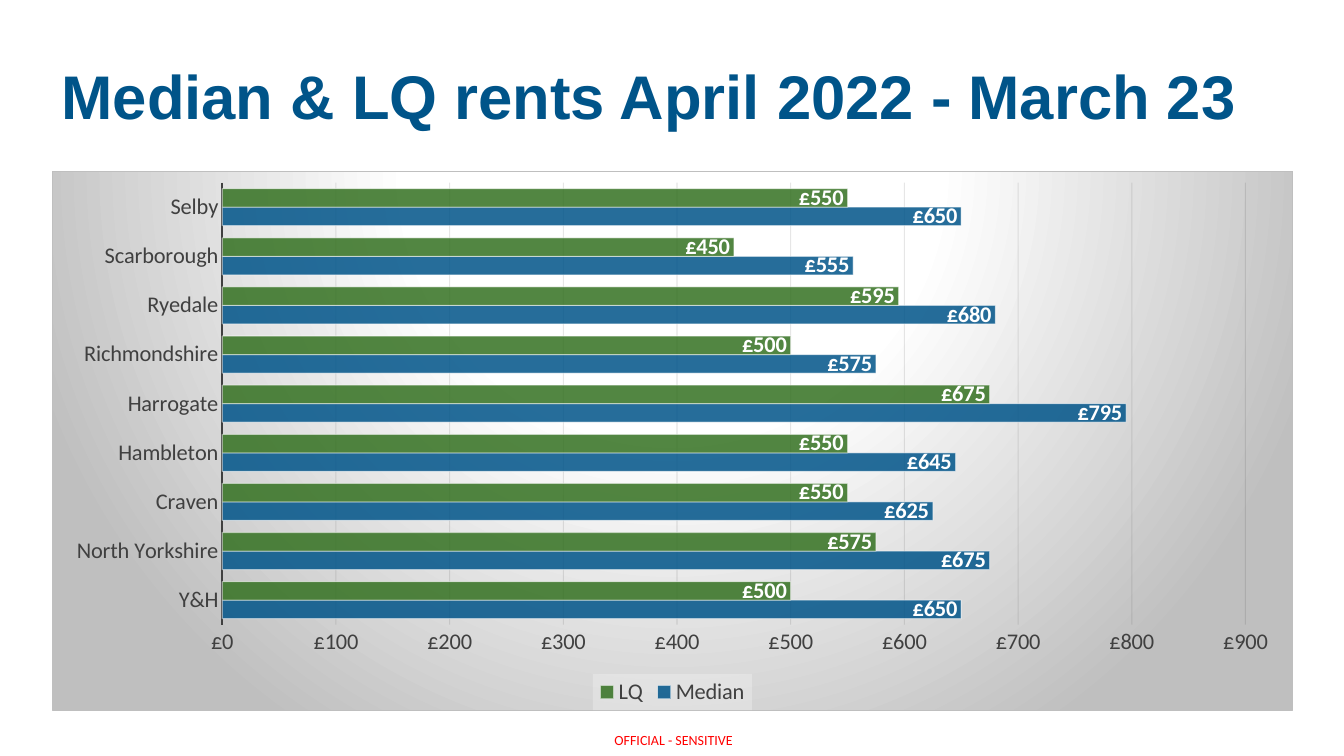
"""Build the slide of median and lower quartile rents by district."""
from dataclasses import dataclass
from typing import Any

from lxml import etree
from pptx import Presentation
from pptx import util as u
from pptx.chart import data as cd
from pptx.dml.color import RGBColor
from pptx.enum import chart as ce
from pptx.enum import text
from pptx.oxml import parse_xml
from pptx.oxml.ns import qn


@dataclass(frozen=True)
class Theme:
    """Colours, fonts and type sizes of the slide."""
    blue: str = "005489"
    green: str = "347121"
    grey: str = "404040"
    edge: str = "BFBFBF"
    grid: str = "0D0D0D"
    pale: str = "F2F2F2"
    white: str = "FFFFFF"
    black: str = "000000"
    red: str = "FF0000"
    head: str = "Arial"
    body: str = "Calibri"
    title: int = 44
    label: int = 16
    small: int = 10


@dataclass(frozen=True)
class Rents:
    """One series of monthly rents."""
    name: str
    color: str
    vals: tuple[int, ...]


@dataclass(frozen=True)
class Note:
    """One line of text and its place in centimetres."""
    words: str
    box: tuple[float, float, float, float]
    font: str
    size: int
    color: str
    bold: bool
    inset: tuple[float, float]
    align: Any
    wrap: bool
    lead: float


T = Theme()
POUNDS = '"£"#,##0'
AREAS = ("Y&H", "North Yorkshire", "Craven", "Hambleton", "Harrogate",
         "Richmondshire", "Ryedale", "Scarborough", "Selby")
RENTS = (
    Rents("Median", T.blue, (650, 675, 625, 645, 795, 575, 680, 555, 650)),
    Rents("LQ", T.green, (500, 575, 550, 550, 675, 500, 595, 450, 550)),
)
NOTES = (
    Note("OFFICIAL - SENSITIVE", (15.44, 18.44, 3.07, 0.43), T.body, T.small,
         T.red, False, (0, 0), text.PP_ALIGN.CENTER, False, 1.0),
    Note("Median & LQ rents April 2022 - March 23", (1.3, 0.69, 30.4, 3.63),
         T.head, T.title, T.blue, True, (0.25, 0.13), text.PP_ALIGN.LEFT,
         True, 0.9),
)
SPACE = ('xmlns:c="http://schemas.openxmlformats.org/drawingml/2006/chart" '
         'xmlns:a="http://schemas.openxmlformats.org/drawingml/2006/main"')
GLOW = f"""<c:spPr {SPACE}><a:gradFill><a:gsLst>
<a:gs pos="0"><a:srgbClr val="{T.white}"/></a:gs>
<a:gs pos="39000"><a:srgbClr val="{T.white}"/></a:gs>
<a:gs pos="100000"><a:srgbClr val="{T.edge}"/></a:gs></a:gsLst>
<a:path path="circle"><a:fillToRect l="50000" t="-80000" r="50000" b="180000"/>
</a:path></a:gradFill>
<a:ln w="9525"><a:solidFill><a:srgbClr val="{T.edge}"/></a:solidFill></a:ln>
</c:spPr>"""
VEIL = f"""<c:spPr {SPACE}><a:solidFill><a:srgbClr val="{T.pale}">
<a:alpha val="39000"/></a:srgbClr></a:solidFill></c:spPr>"""


def assign(item: Any, attrs: dict[str, Any]) -> None:
    """Set every named attribute of an item."""
    for key, val in attrs.items():
        setattr(item, key, val)


def style(font: Any, color: str, size: int, face: str = T.body,
          bold: bool = False) -> None:
    """Give a font its face, size, weight and colour."""
    assign(font, {"name": face, "size": u.Pt(size), "bold": bold})
    font.color.rgb = RGBColor.from_string(color)


def stroke(line: Any, color: str, width: float) -> None:
    """Give a line its colour and width."""
    line.color.rgb = RGBColor.from_string(color)
    line.width = u.Pt(width)


def fade(chart: Any, query: str, share: int) -> None:
    """Set the opacity in percent of the matching colours."""
    for color in chart.element.xpath(f"{query}/a:solidFill/a:srgbClr"):
        etree.SubElement(color, qn("a:alpha")).set("val", str(share * 1000))


def write(slide: Any, note: Note) -> None:
    """Place one line of text."""
    box = slide.shapes.add_textbox(*map(u.Cm, note.box))
    side, top = map(u.Cm, note.inset)
    frame = box.text_frame
    assign(frame, {
        "word_wrap": note.wrap, "margin_left": side, "margin_right": side,
        "margin_top": top, "margin_bottom": top,
        "vertical_anchor": text.MSO_ANCHOR.MIDDLE,
    })
    para = frame.paragraphs[0]
    assign(para, {"alignment": note.align, "line_spacing": note.lead})
    run = para.add_run()
    run.text = note.words
    style(run.font, note.color, note.size, note.font, note.bold)


def paint(plot: Any) -> None:
    """Colour and label the bars."""
    assign(plot, {"gap_width": 65, "overlap": 0, "vary_by_categories": False})
    for bars, rents in zip(plot.series, RENTS):
        bars.format.fill.solid()
        bars.format.fill.fore_color.rgb = RGBColor.from_string(rents.color)
        stroke(bars.format.line, T.white, 0.75)
        tags = bars.data_labels
        assign(tags, {
            "show_value": True, "number_format": POUNDS,
            "number_format_is_linked": False,
            "position": ce.XL_LABEL_POSITION.INSIDE_END,
        })
        style(tags.font, T.white, T.label, bold=True)


def scale(chart: Any) -> None:
    """Format both axes and the grid."""
    cats, vals = chart.category_axis, chart.value_axis
    for axis in (cats, vals):
        assign(axis, {"major_tick_mark": ce.XL_TICK_MARK.NONE,
                      "minor_tick_mark": ce.XL_TICK_MARK.NONE})
        style(axis.tick_labels.font, T.grey, T.label)
    stroke(cats.format.line, T.grey, 1.5)
    assign(vals, {"minimum_scale": 0, "maximum_scale": 900, "major_unit": 100,
                  "has_major_gridlines": True})
    assign(vals.tick_labels, {"number_format": POUNDS,
                              "number_format_is_linked": False})
    vals.format.line.fill.background()
    stroke(vals.major_gridlines.format.line, T.grid, 0.75)


def draw(slide: Any) -> None:
    """Add the bar chart of rents."""
    data = cd.CategoryChartData(number_format=POUNDS)
    data.categories = AREAS
    for rents in RENTS:
        data.add_series(rents.name, rents.vals)
    place = map(u.Cm, (1.3, 4.32, 31.29, 13.59))
    chart = slide.shapes.add_chart(
        ce.XL_CHART_TYPE.BAR_CLUSTERED, *place, data).chart
    assign(chart, {"has_title": False, "has_legend": True})
    style(chart.font, T.black, T.small)
    assign(chart.legend, {"position": ce.XL_LEGEND_POSITION.BOTTOM,
                          "include_in_layout": False})
    style(chart.legend.font, T.grey, T.label)
    paint(chart.plots[0])
    scale(chart)
    fade(chart, ".//c:ser/c:spPr", 85)
    fade(chart, ".//c:ser/c:spPr/a:ln", 50)
    fade(chart, ".//c:majorGridlines/c:spPr/a:ln", 10)
    for query, look in (("c:txPr", GLOW), (".//c:legend/c:txPr", VEIL)):
        chart.element.xpath(query)[0].addprevious(parse_xml(look))


def main() -> None:
    """Build and save the slide."""
    deck = Presentation()
    assign(deck, {"slide_width": u.Cm(33.87), "slide_height": u.Cm(19.05)})
    slide = deck.slides.add_slide(deck.slide_layouts[6])
    for note in NOTES:
        write(slide, note)
    draw(slide)
    deck.save("out.pptx")


if __name__ == "__main__":
    main()
